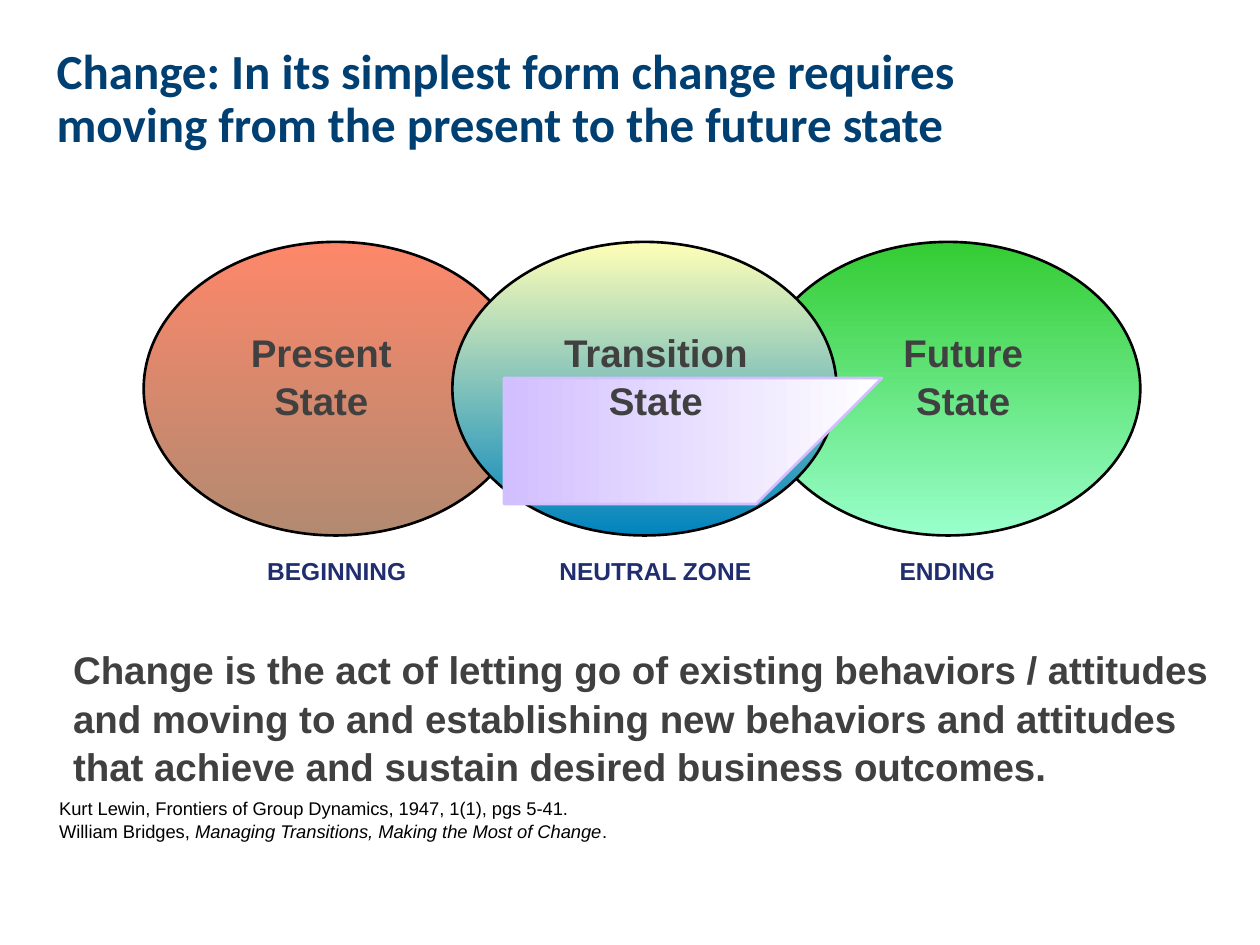
from pptx import Presentation
from pptx.dml.color import RGBColor
from pptx.enum.shapes import MSO_SHAPE as Shape
from pptx.enum.text import MSO_ANCHOR as Anchor, MSO_AUTO_SIZE as AutoSize, PP_ALIGN as Align
from pptx.oxml.ns import qn
from pptx.util import Inches, Pt
from lxml.etree import SubElement

NAVY = RGBColor(0x00, 0x3F, 0x72)
INDIGO = RGBColor(0x20, 0x2E, 0x6F)
GRAY = RGBColor(0x40, 0x40, 0x40)
BLACK = RGBColor(0, 0, 0)
WHITE = RGBColor(0xFF, 0xFF, 0xFF)
RED = RGBColor(0xFF, 0x33, 0x00)
BROWN = RGBColor(0x76, 0x2F, 0x00)
GREEN = RGBColor(0x33, 0xCC, 0x33)
MINT = RGBColor(0x99, 0xFF, 0xCC)
CREAM = RGBColor(0xFF, 0xFF, 0xB7)
BLUE = RGBColor(0x00, 0x83, 0xBE)
LILAC = RGBColor(0xD2, 0xBF, 0xFF)


class ChangeSlide:
    title_style = dict(name="Calibri", size=Pt(28), bold=True)
    strong_style = dict(name="Arial", size=Pt(22), bold=True)
    label_style = dict(name="Arial", size=Pt(14), bold=True)
    note_style = dict(name="Arial", size=Pt(10.5))

    def __init__(self, prs):
        self.s = prs.slides.add_slide(prs.slide_layouts[5])

    def add_run(self, p, text, style, color, **extra):
        r = p.add_run()
        r.text = text
        for key, value in {**style, **extra}.items():
            setattr(r.font, key, value)
        r.font.color.rgb = color

    def title(self, text, box):
        sp = self.s.shapes.title
        sp.left, sp.top, sp.width, sp.height = map(Inches, box)
        tf = sp.text_frame
        tf.auto_size = AutoSize.NONE
        tf.vertical_anchor = Anchor.MIDDLE
        p = tf.paragraphs[0]
        p.alignment = Align.LEFT
        p.line_spacing = 0.9
        self.add_run(p, text, self.title_style, NAVY)

    def text(self, paragraphs, box, style, color, align=Align.LEFT, insets=(0, 0)):
        tf = self.s.shapes.add_textbox(*map(Inches, box)).text_frame
        tf.word_wrap = True
        tf.margin_left, tf.margin_top = map(Inches, insets)
        tf.margin_right = tf.margin_bottom = 0
        for i, runs in enumerate(paragraphs):
            p = tf.add_paragraph() if i else tf.paragraphs[0]
            p.alignment = align
            p.line_spacing = 1.05
            for text, extra in runs:
                self.add_run(p, text, style, color, **extra)
        return tf

    def tabbed_labels(self, labels, box, stops):
        tf = self.text([[("\t".join(labels), {})]], box, self.label_style, INDIGO,
                       insets=(0.16, 0.05))
        tabs = SubElement(tf.paragraphs[0]._p.get_or_add_pPr(), qn("a:tabLst"))
        for stop in stops:
            SubElement(tabs, qn("a:tab"), pos=str(Inches(stop)), algn="l")

    def paint(self, sp, colors, angle, line, alphas=()):
        sp.shadow.inherit = False
        sp.fill.gradient()
        sp.fill.gradient_angle = angle
        for stop, color in zip(sp.fill.gradient_stops, colors):
            stop.color.rgb = color
        for node, alpha in zip(sp._element.spPr.iter(qn("a:srgbClr")), alphas):
            SubElement(node, qn("a:alpha"), val=str(alpha * 1000))
        sp.line.color.rgb = line
        sp.line.width = Pt(1.5)

    def ellipse(self, left, colors, alphas=()):
        sp = self.s.shapes.add_shape(Shape.OVAL, *map(Inches, (left, 1.92, 3.05, 2.33)))
        self.paint(sp, colors, 270, BLACK, alphas)

    def band(self, points, colors):
        builder = self.s.shapes.build_freeform(*points[0], scale=Inches(1))
        builder.add_line_segments(points[1:], close=True)
        self.paint(builder.convert_to_shape(), colors, 0, LILAC)

    def state(self, name, left, width):
        self.text([[(name, {})], [("State", {})]], (left, 2.59, width, 0.98),
                  self.strong_style, GRAY, Align.CENTER)


def main():
    prs = Presentation()
    prs.slide_width, prs.slide_height = Inches(10), Inches(7.5)
    slide = ChangeSlide(prs)
    slide.title("Change: In its simplest form change requires moving from the present "
                "to the future state", (0.35, 0.37, 7.97, 0.85))
    slide.text([[("Kurt Lewin, Frontiers of Group Dynamics, 1947, 1(1), pgs 5-41.", {})],
                [("William Bridges, ", {}),
                 ("Managing Transitions, Making the Most of Change", dict(italic=True)),
                 (".", {})]],
               (0.47, 6.32, 6.5, 0.38), slide.note_style, BLACK)

    slide.ellipse(1.14, (RED, BROWN), (59, 56))
    slide.ellipse(6, (GREEN, MINT))
    slide.ellipse(3.59, (CREAM, BLUE))
    slide.band([(3.86, 3.72), (6.4, 3.71), (6.47, 3.58), (6.53, 3.44), (3.72, 3.44)],
               (LILAC, WHITE))
    for name, left, width in (("Present", 1.64, 1.82), ("Transition", 4.05, 2.31),
                              ("Future", 6.88, 1.53)):
        slide.state(name, left, width)

    slide.tabbed_labels(("BEGINNING", "NEUTRAL ZONE", "ENDING"),
                        (1.96, 4.35, 6.89, 0.57), (2.32, 5.02))
    slide.text([[("Change is the act of letting go of existing behaviors / attitudes and "
                  "moving to and establishing new behaviors and attitudes that achieve "
                  "and sustain desired business outcomes.", {})]],
               (0.58, 5.11, 9.22, 1.25), slide.strong_style, GRAY)
    prs.save("out.pptx")


if __name__ == "__main__":
    main()
